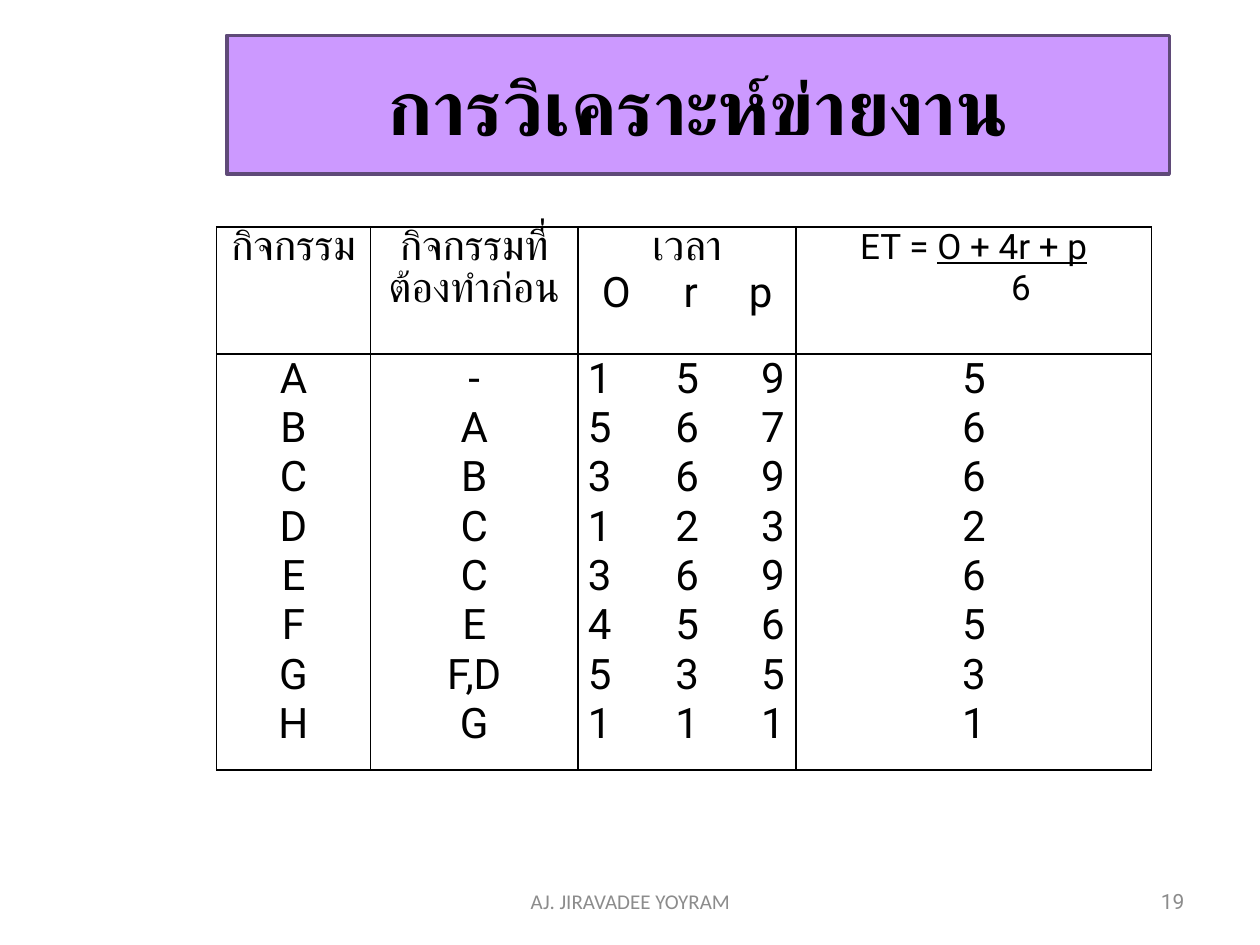
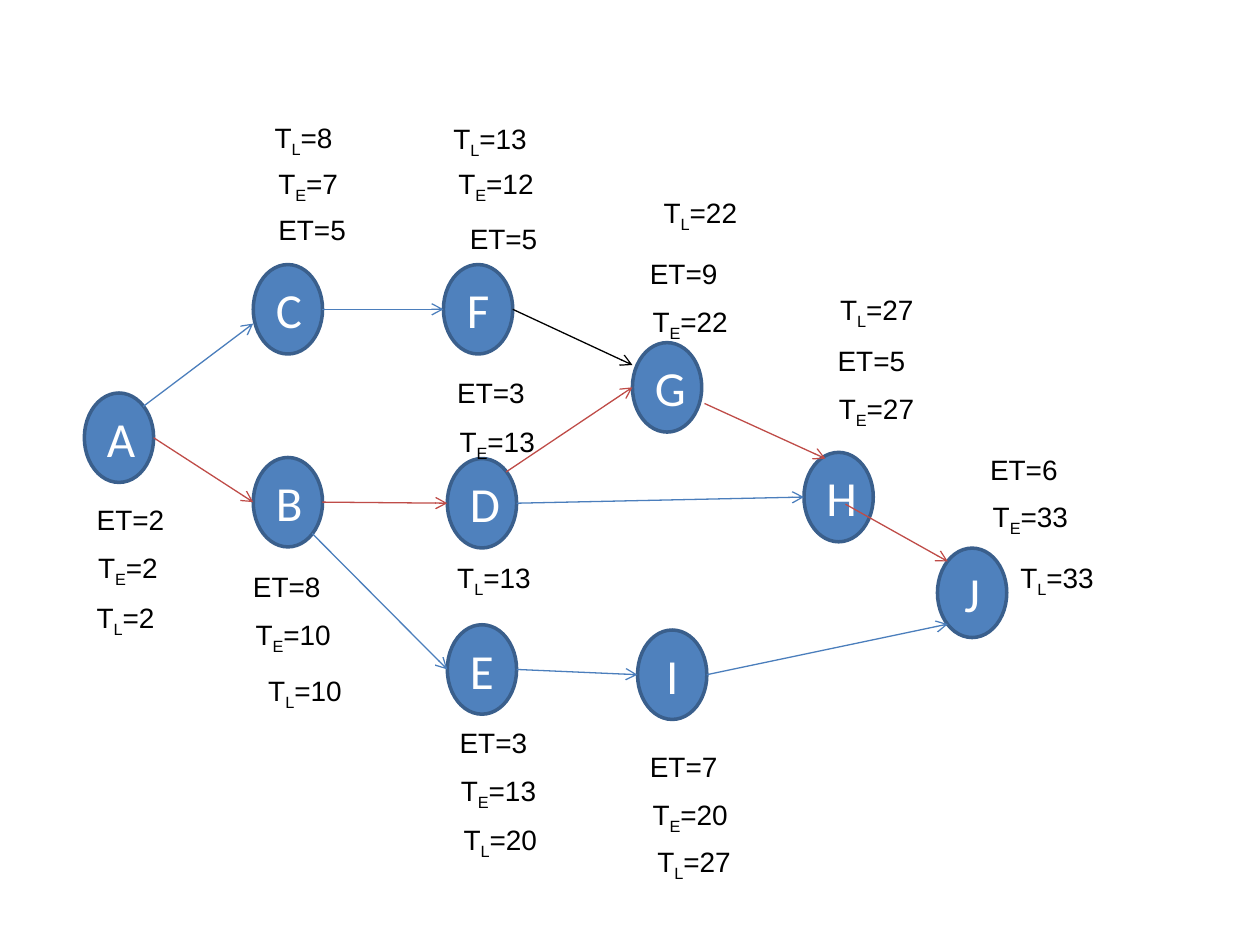
from lxml.etree import SubElement
from pptx import Presentation
from pptx.dml.color import RGBColor
from pptx.enum.shapes import MSO_CONNECTOR as Connector, MSO_SHAPE as Shape
from pptx.enum.text import MSO_ANCHOR as Anchor, PP_ALIGN as Align
from pptx.oxml.ns import qn
from pptx.util import Pt

BLACK, WHITE, GREY = "000000", "FFFFFF", "8C8C8C"
LILAC, PLUM = "CC99FF", "5F4A78"
NODE_BLUE, NODE_EDGE = "4F81BD", "3A5F8C"
PATH_BLUE, CRITICAL_RED = "4B7EBC", "BF4C48"
NODE_WIDTH, NODE_HEIGHT = 39.6, 51.1

HEADINGS = ["กิจกรรม", "กิจกรรมที่ต้องทำก่อน"]
ACTIVITIES = [  # activity, predecessor, (O, r, p), expected time
    ("A", "-", "159", "5"),
    ("B", "A", "567", "6"),
    ("C", "B", "369", "6"),
    ("D", "C", "123", "2"),
    ("E", "C", "369", "6"),
    ("F", "E", "456", "5"),
    ("G", "F,D", "535", "3"),
    ("H", "G", "111", "1"),
]
COLUMN_WIDTHS = [87.8, 118.8, 124.6, 203]
ROW_HEIGHTS = [72.7, 237.6]
HEADING_TABS, TIME_TABS = (17.5, 60, 100), (8, 58, 107)

# node: corner, then (value, left, top) of ET, TE and TL
NODES = {
    "A": ((48.2, 224.6), (2, 48.2, 283.7), (2, 49, 311), (2, 48.2, 339.8)),
    "B": ((144.7, 261.4), (8, 137.5, 321.8), (10, 139, 349.2), (10, 146.2, 381.6)),
    "C": ((144.7, 151.2), (5, 152, 118), (7, 152, 91.4), (8, 149.8, 65.5)),
    "D": ((255.6, 262), (3, 254.2, 211), (13, 255.6, 239), (13, 254.2, 316.8)),
    "E": ((255.6, 357), (3, 255.6, 411), (13, 256.3, 438.5), (20, 257.8, 466.6)),
    "F": ((253.4, 151.2), (5, 261.4, 123), (12, 254.9, 91.4), (13, 252, 66.2)),
    "G": ((361.4, 195.8), (9, 364.3, 143.3), (22, 365.8, 170.6), (22, 372.2, 108)),
    "H": ((459.4, 258.5), (5, 471.6, 193), (27, 472.3, 220.3), (27, 473, 163.4)),
    "I": ((364.3, 360), (7, 364.3, 424.8), (20, 365.8, 452.2), (27, 368.6, 478.8)),
    "J": ((535.7, 313.2), (6, 558.7, 254.9), (33, 560.2, 282.2), (33, 576, 316.8)),
}
# Points on a node as fractions of its width and height
LEFT, RIGHT = (0, 0.5), (1, 0.5)
NE, SE, NW, SW = (0.85, 0.15), (0.85, 0.85), (0.15, 0.15), (0.15, 0.85)
ARROWS = [
    ("A", RIGHT, "B", LEFT, CRITICAL_RED),
    ("A", NE, "C", (0, 0.66), PATH_BLUE),
    ("B", RIGHT, "D", LEFT, CRITICAL_RED),
    ("B", SE, "E", LEFT, PATH_BLUE),
    ("C", RIGHT, "F", LEFT, PATH_BLUE),
    ("D", NE, "G", LEFT, CRITICAL_RED),
    ("D", RIGHT, "H", LEFT, PATH_BLUE),
    ("E", RIGHT, "I", LEFT, PATH_BLUE),
    ("H", (0.6, 0.58), "J", NW, CRITICAL_RED),
    ("I", RIGHT, "J", SW, PATH_BLUE),
    ("F", RIGHT, "G", (0, 0.25), BLACK),
    ("G", (1.04, 0.68), "H", (0.31, 0.07), CRITICAL_RED),
]


def color(hex_value):
    return RGBColor.from_string(hex_value)


def write(paragraph, text, size=24, font="Roboto", ink=BLACK, bold=False,
          underline=False, subscript=False, align=None):
    """Append a formatted run to the paragraph."""
    run = paragraph.add_run()
    run.text = text
    run.font.size, run.font.name = Pt(size), font
    run.font.bold, run.font.underline = bold, underline
    run.font.color.rgb = color(ink)
    if subscript:
        run.font._element.set("baseline", "-25000")
    if align is not None:
        paragraph.alignment = align


def paint(shape, fill, edge):
    shape.fill.solid()
    shape.fill.fore_color.rgb = color(fill)
    shape.line.color.rgb = color(edge)
    shape.line.width = Pt(2)
    shape.shadow.inherit = False


def paragraphs(frame):
    """Yield the first paragraph of the frame, then new ones."""
    yield frame.paragraphs[0]
    while True:
        yield frame.add_paragraph()


def write_column(cell, entries):
    for entry, paragraph in zip(entries, paragraphs(cell.text_frame)):
        write(paragraph, entry, align=Align.CENTER)


def write_tabbed(paragraph, values, stops):
    """Centre each value on its own tab stop."""
    tabs = SubElement(paragraph._p.get_or_add_pPr(), qn("a:tabLst"))
    for stop in stops:
        SubElement(tabs, qn("a:tab"), pos=str(Pt(stop)), algn="ctr")
    write(paragraph, "".join("\t" + value for value in values), align=Align.LEFT)


def add_borders(cell):
    properties = cell._tc.get_or_add_tcPr()
    for side in ("lnL", "lnR", "lnT", "lnB"):
        border = SubElement(properties, qn("a:" + side), w=str(Pt(1)))
        SubElement(SubElement(border, qn("a:solidFill")), qn("a:srgbClr"), val=BLACK)


def node_point(node, fraction):
    left, top = NODES[node][0]
    return left + fraction[0] * NODE_WIDTH, top + fraction[1] * NODE_HEIGHT


class Deck:
    TITLE_ONLY, BLANK = 5, 6

    def __init__(self):
        self.presentation = Presentation()
        self.presentation.slide_width, self.presentation.slide_height = Pt(720), Pt(540)

    def new_slide(self, layout):
        layouts = self.presentation.slide_layouts
        self.slide = self.presentation.slides.add_slide(layouts[layout])

    def title(self, text):
        banner = self.slide.shapes.title
        banner.left, banner.top = Pt(129.6), Pt(20.2)
        banner.width, banner.height = Pt(538.6), Pt(79.2)
        SubElement(banner._element.spPr, qn("a:prstGeom"), prst="roundRect")
        paint(banner, LILAC, PLUM)
        banner.text_frame.vertical_anchor = Anchor.MIDDLE
        write(banner.text_frame.paragraphs[0], text, size=44, bold=True, align=Align.CENTER)

    def text_box(self, left, top, width, height, anchor=Anchor.TOP):
        """Add an empty text box and return its first paragraph."""
        frame = self.slide.shapes.add_textbox(Pt(left), Pt(top), Pt(width), Pt(height)).text_frame
        frame.word_wrap = True
        frame.vertical_anchor = anchor
        return frame.paragraphs[0]

    def footer(self, author, number):
        write(self.text_box(516.2, 500.4, 167.8, 28.8, Anchor.MIDDLE), number,
              size=12, ink=GREY, align=Align.RIGHT)
        write(self.text_box(246.2, 500.4, 228.2, 28.8, Anchor.MIDDLE), author,
              size=12, font="Calibri", ink=GREY, align=Align.CENTER)

    def table(self, left, top, widths, heights):
        table = self.slide.shapes.add_table(
            len(heights), len(widths), Pt(left), Pt(top),
            Pt(sum(widths)), Pt(sum(heights))).table
        table.first_row = table.horz_banding = False
        for column, width in zip(table.columns, widths):
            column.width = Pt(width)
        for row, height in zip(table.rows, heights):
            row.height = Pt(height)
        for cell in table.iter_cells():
            cell.margin_left = cell.margin_right = Pt(4.3)
            cell.margin_top = cell.margin_bottom = 0
            add_borders(cell)
            cell.fill.background()
        return table

    def node(self, letter, left, top):
        oval = self.slide.shapes.add_shape(
            Shape.OVAL, Pt(left), Pt(top), Pt(NODE_WIDTH), Pt(NODE_HEIGHT))
        paint(oval, NODE_BLUE, NODE_EDGE)
        oval.text_frame.vertical_anchor = Anchor.MIDDLE
        write(oval.text_frame.paragraphs[0], letter, size=28, font="Calibri",
              ink=WHITE, align=Align.CENTER)

    def arrow(self, start, end, ink):
        line = self.slide.shapes.add_connector(
            Connector.STRAIGHT, *(Pt(length) for length in (*start, *end)))
        line.line.color.rgb = color(ink)
        line.line.width = Pt(0.75)
        SubElement(line.line._get_or_add_ln(), qn("a:tailEnd"), type="arrow")
        SubElement(line._element.spPr, qn("a:effectLst"))

    def time_label(self, kind, value, left, top):
        """Write ET=value, or T with a subscript E or L."""
        label = self.text_box(left, top, 64, 26.6)
        style = {"size": 16, "font": "Arial"}
        if kind == "ET":
            write(label, f"ET={value}", **style)
        else:
            write(label, "T", **style)
            write(label, kind[1], subscript=True, **style)
            write(label, f"={value}", **style)


def build_activity_slide(deck):
    deck.new_slide(Deck.TITLE_ONLY)
    deck.title("การวิเคราะห์ข่ายงาน")
    deck.footer("AJ. JIRAVADEE YOYRAM", "19")
    table = deck.table(123.8, 129.6, COLUMN_WIDTHS, ROW_HEIGHTS)

    for index, heading in enumerate(HEADINGS):
        write_column(table.cell(0, index), [heading])
    time_heading = table.cell(0, 2)
    write_column(time_heading, ["เวลา"])
    write_tabbed(time_heading.text_frame.add_paragraph(), "Orp", HEADING_TABS)

    formula = table.cell(0, 3).text_frame
    numerator, denominator = formula.paragraphs[0], formula.add_paragraph()
    write(numerator, "ET = ", size=20, align=Align.CENTER)
    write(numerator, "O + 4r + p", size=20, underline=True)
    write(denominator, "6", size=20, align=Align.CENTER)
    denominator._p.get_or_add_pPr().set("marL", str(Pt(54)))

    activities, predecessors, times, expected = zip(*ACTIVITIES)
    for index, entries in ((0, activities), (1, predecessors), (3, expected)):
        write_column(table.cell(1, index), entries)
    for estimate, paragraph in zip(times, paragraphs(table.cell(1, 2).text_frame)):
        write_tabbed(paragraph, estimate, TIME_TABS)


def build_network_slide(deck):
    deck.new_slide(Deck.BLANK)
    for letter, (corner, *_) in NODES.items():
        deck.node(letter, *corner)
    for source, exit_point, target, entry_point, ink in ARROWS:
        deck.arrow(node_point(source, exit_point), node_point(target, entry_point), ink)
    for _, *labels in NODES.values():
        for kind, label in zip(("ET", "TE", "TL"), labels):
            deck.time_label(kind, *label)


def main():
    deck = Deck()
    build_activity_slide(deck)
    build_network_slide(deck)
    deck.presentation.save("out.pptx")


if __name__ == "__main__":
    main()
